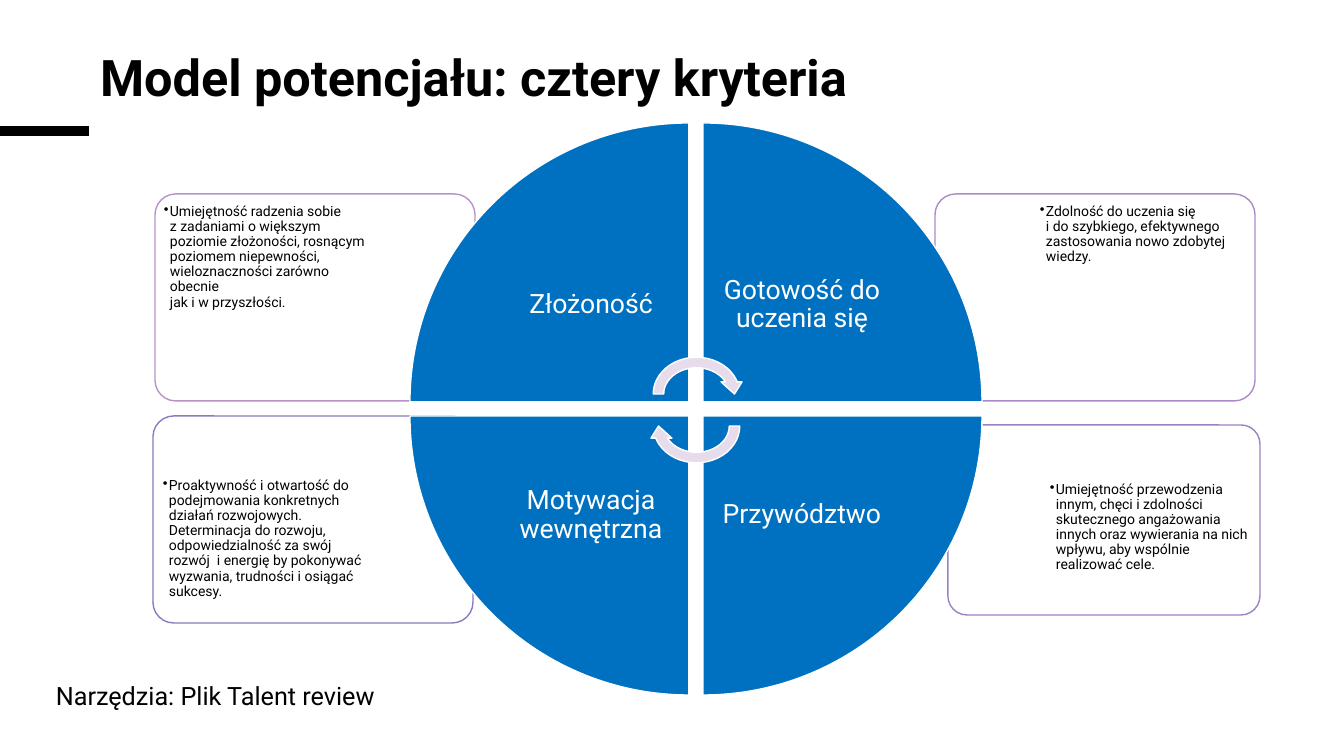
from copy import deepcopy

from pptx import Presentation
from pptx.dml.color import RGBColor
from pptx.enum.shapes import MSO_CONNECTOR, MSO_SHAPE as SHAPE
from pptx.enum.text import MSO_ANCHOR as ANCHOR, MSO_AUTO_SIZE, PP_ALIGN as ALIGN
from pptx.oxml.ns import qn
from pptx.util import Pt
from lxml.etree import SubElement

EMU_PER_PX = 914400 / 100.8
COLORS = {
    "black": "000000", "white": "FFFFFF", "wedge": "0070C0", "arrow": "E6DCEC",
    "top_left": "B892CB", "top_right": "AA8AC7",
    "bottom_left": "8B7ABF", "bottom_right": "9B82C3",
}
COLORS = {name: RGBColor.from_string(value) for name, value in COLORS.items()}


def px(*lengths):
    return [round(length * EMU_PER_PX) for length in lengths]


def write(box, text, size, color="black", margin=None, bold=False, bullet=False,
          anchor=ANCHOR.TOP, **paragraph_format):
    frame = box.text_frame
    frame.word_wrap = True
    frame.auto_size = MSO_AUTO_SIZE.NONE
    frame.vertical_anchor = anchor
    if margin is not None:
        for side in ("left", "top", "right", "bottom"):
            setattr(frame, f"margin_{side}", px(margin)[0])
    para = frame.paragraphs[0]
    para.text = text
    for name, value in paragraph_format.items():
        setattr(para, name, value)
    for span in para.runs:
        for name, value in {"name": "Roboto", "size": Pt(size), "bold": bold}.items():
            setattr(span.font, name, value)
        span.font.color.rgb = COLORS[color]
    # Line breaks take the size of the text around them
    for line_break in para._p.findall(qn("a:br")):
        line_break.append(deepcopy(para.runs[0]._r.rPr))
    if bullet:
        properties = para._p.get_or_add_pPr()
        hanging = px(6)[0]
        properties.set("marL", str(hanging))
        properties.set("indent", str(-hanging))
        SubElement(properties, qn("a:buChar"), char="•")


deck = Presentation()
deck.slide_width, deck.slide_height = px(1344, 756)
page = deck.slides.add_slide(deck.slide_layouts[5])
shapes = page.shapes

# Title and the bar beside it
bar = shapes.add_connector(MSO_CONNECTOR.STRAIGHT, *px(0, 131, 89, 131))
bar.line.color.rgb = COLORS["black"]
bar.line.width = Pt(6.75)
SubElement(bar._element.spPr, qn("a:effectLst"))

title = shapes.title
title.left, title.top, title.width, title.height = px(90, 50, 1094, 84)
write(title, "Model potencjału: cztery kryteria", 36, bold=True,
      alignment=ALIGN.LEFT, line_spacing=0.85)

# Description cards: colour, frame, text area, wording
cards = [
    ("bottom_right", (948, 425, 312, 190), (1045, 477, 211, 134),
     "Umiejętność przewodzenia innym, chęci i zdolności skutecznego angażowania "
     "innych oraz wywierania na nich wpływu, aby wspólnie realizować cele."),
    ("bottom_left", (153, 416, 320, 207), (158, 473, 215, 146),
     "Proaktywność i otwartość do podejmowania konkretnych działań rozwojowych. "
     "Determinacja do rozwoju, odpowiedzialność za swój rozwój  i energię by "
     "pokonywać wyzwania, trudności i osiągać sukcesy."),
    ("top_right", (935, 194, 320, 207), (1035, 199, 215, 146),
     "Zdolność do uczenia się \ni do szybkiego, efektywnego zastosowania nowo "
     "zdobytej wiedzy."),
    ("top_left", (155, 194, 320, 207), (159, 199, 215, 146),
     "Umiejętność radzenia sobie \nz zadaniami o większym poziomie złożoności, "
     "rosnącym poziomem niepewności, wieloznaczności zarówno obecnie \n"
     "jak i w przyszłości."),
]
for color, frame_area, text_area, wording in cards:
    card = shapes.add_shape(SHAPE.ROUNDED_RECTANGLE, *px(*frame_area))
    card.adjustments[0] = 0.1
    card.shadow.inherit = False
    card.fill.solid()
    card.fill.fore_color.rgb = COLORS["white"]
    white = card._element.spPr.find(qn("a:solidFill"))[0]
    SubElement(white, qn("a:alpha"), val="90000")
    card.line.color.rgb = COLORS[color]
    card.line.width = Pt(1)
    write(shapes.add_textbox(*px(*text_area)), wording, 10, margin=5,
          bullet=True, line_spacing=0.9)

# Four wedges and two turning arrows: kind, area, rotation, colour
quadrants = [(0, 0, "Złożoność"), (1, 0, "Gotowość do uczenia się"),
             (1, 1, "Przywództwo"), (0, 1, "Motywacja wewnętrzna")]
wheel = [(SHAPE.PIE_WEDGE, (410 + 293 * col, 123 + 293 * row, 279, 279), 90 * turn, "wedge")
         for turn, (col, row, label) in enumerate(quadrants)]
wheel += [(SHAPE.CIRCULAR_ARROW, (648, 352 + 32 * turn, 97, 84), 180 * turn, "arrow")
          for turn in range(2)]
for kind, area, rotation, color in wheel:
    part = shapes.add_shape(kind, *px(*area))
    part.rotation = rotation
    part.shadow.inherit = False
    part.fill.solid()
    part.fill.fore_color.rgb = COLORS[color]
    part.line.color.rgb = COLORS["white"]
    part.line.width = Pt(1)

# Wedge labels
for col, row, label in quadrants:
    box = shapes.add_textbox(*px(492 + 211 * col, 206 + 210 * row, 198, 198))
    write(box, label, 19, "white", margin=15, anchor=ANCHOR.MIDDLE,
          alignment=ALIGN.CENTER, line_spacing=0.9)

# Tools note
note = shapes.add_textbox(*px(46, 666, 522, 73))
write(note, "Narzędzia: Plik Talent review", 18, line_spacing=1.3, space_before=Pt(10))

deck.save("out.pptx")
